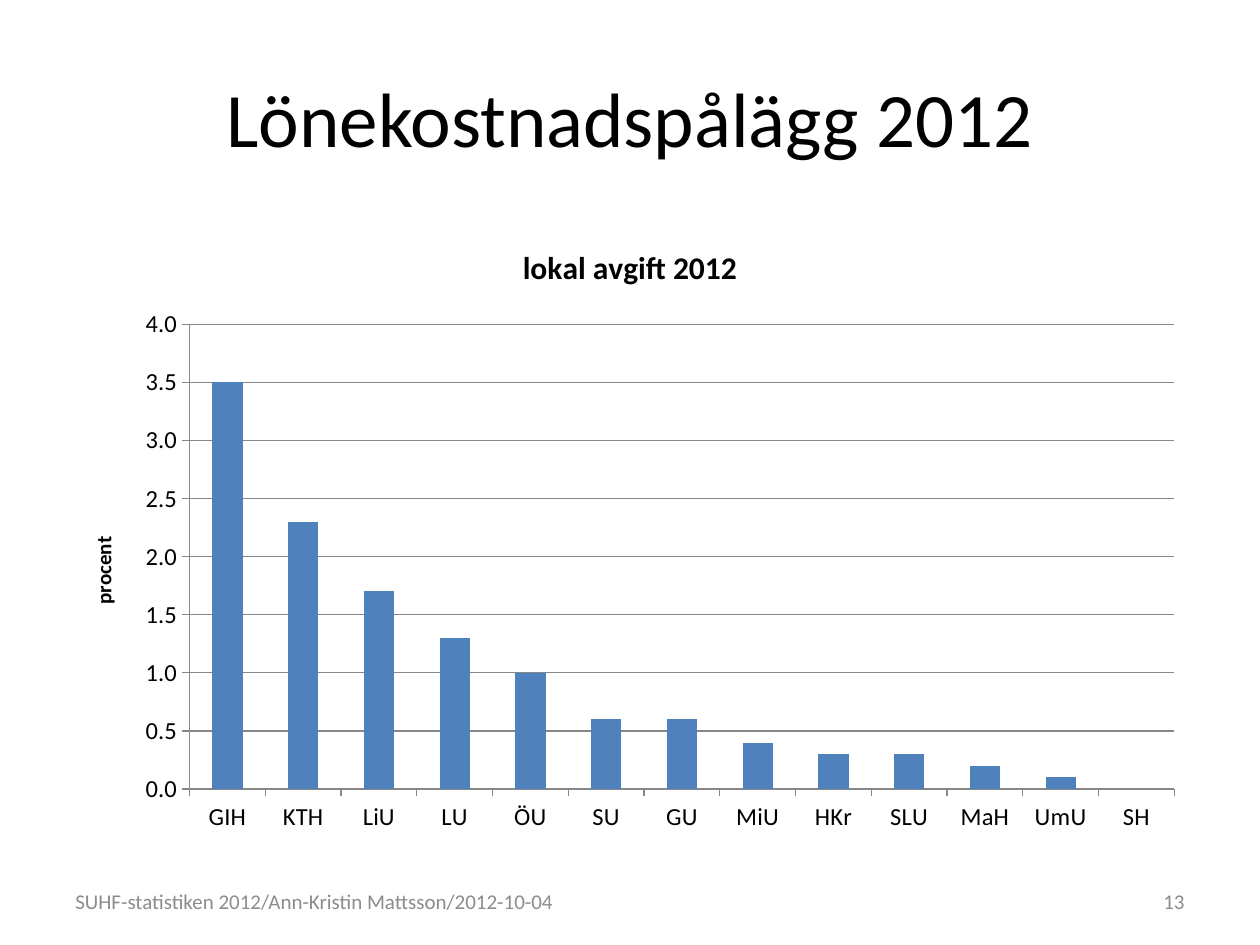
import dataclasses

import pptx
import pptx.chart.data
import pptx.dml.color
import pptx.enum.chart
import pptx.enum.text
import pptx.util
from pptx.util import Inches

ALIGN = pptx.enum.text.PP_ALIGN
TICK = pptx.enum.chart.XL_TICK_MARK


@dataclasses.dataclass(frozen=True)
class Theme:
    """Colours, font and type sizes of the slide."""

    font: str = "Calibri"
    text: str = "000000"
    muted: str = "8C8C8C"
    line: str = "878787"
    bar: str = "4F81BD"
    title_size: int = 44
    chart_title_size: int = 18
    axis_size: int = 14
    small_size: int = 12


THEME = Theme()
FEES = {
    "GIH": 3.5, "KTH": 2.3, "LiU": 1.7, "LU": 1.3, "ÖU": 1.0, "SU": 0.6, "GU": 0.6,
    "MiU": 0.4, "HKr": 0.3, "SLU": 0.3, "MaH": 0.2, "UmU": 0.1, "SH": 0.0,
}


def set_values(target, values):
    """Set each attribute of the target from a dict."""
    for name, value in values.items():
        setattr(target, name, value)


def style_font(font, size, color=THEME.text, bold=False):
    """Apply the theme font with a size, colour and weight."""
    set_values(font, {"name": THEME.font, "size": pptx.util.Pt(size), "bold": bold})
    font.color.rgb = pptx.dml.color.RGBColor.from_string(color)


def style_line(line):
    """Apply the thin grey chart line."""
    line.color.rgb = pptx.dml.color.RGBColor.from_string(THEME.line)
    line.width = pptx.util.Pt(0.75)


def add_text(slide, box, text, size, color, alignment):
    """Place one vertically centred line of text in a box."""
    frame = slide.shapes.add_textbox(*box).text_frame
    set_values(frame, {
        "word_wrap": True,
        "vertical_anchor": pptx.enum.text.MSO_ANCHOR.MIDDLE,
    })
    paragraph = frame.paragraphs[0]
    paragraph.alignment = alignment
    run = paragraph.add_run()
    run.text = text
    style_font(run.font, size, color)


def add_footer(slide, left, top, width, height):
    """Place the source at the left and the page number at the right."""
    source_width, number_width = Inches(4.5), Inches(1.43)
    add_text(slide, (left, top, source_width, height),
             "SUHF-statistiken 2012/Ann-Kristin Mattsson/2012-10-04",
             THEME.small_size, THEME.muted, ALIGN.LEFT)
    add_text(slide, (left + width - number_width, top, number_width, height),
             "13", THEME.small_size, THEME.muted, ALIGN.RIGHT)


def add_chart_title(owner, text, size):
    """Give a chart or an axis a bold title."""
    frame = (owner.chart_title if hasattr(owner, "chart_title") else owner.axis_title).text_frame
    frame.text = text
    style_font(frame.paragraphs[0].runs[0].font, size, bold=True)


def add_fee_chart(slide, box):
    """Place the column chart of local fees in a box."""
    data = pptx.chart.data.CategoryChartData(number_format="0.0")
    data.categories = list(FEES)
    data.add_series("lokal avgift 2012", list(FEES.values()))
    kind = pptx.enum.chart.XL_CHART_TYPE.COLUMN_CLUSTERED
    chart = slide.shapes.add_chart(kind, *box, data).chart
    chart.has_legend = False
    style_font(chart.font, THEME.axis_size)
    add_chart_title(chart, "lokal avgift 2012", THEME.chart_title_size)

    plot = chart.plots[0]
    set_values(plot, {"gap_width": 150, "vary_by_categories": False})
    fill = plot.series[0].format.fill
    fill.solid()
    fill.fore_color.rgb = pptx.dml.color.RGBColor.from_string(THEME.bar)

    for axis in (chart.category_axis, chart.value_axis):
        set_values(axis, {"major_tick_mark": TICK.OUTSIDE, "minor_tick_mark": TICK.NONE})
        style_font(axis.tick_labels.font, THEME.axis_size)
        style_line(axis.format.line)

    axis = chart.value_axis
    set_values(axis, {
        "minimum_scale": 0, "maximum_scale": 4, "major_unit": 0.5,
        "has_major_gridlines": True,
    })
    set_values(axis.tick_labels, {"number_format": "0.0", "number_format_is_linked": False})
    style_line(axis.major_gridlines.format.line)
    add_chart_title(axis, "procent", THEME.small_size)


def main():
    """Build and save the slide."""
    presentation = pptx.Presentation()
    set_values(presentation, {"slide_width": Inches(10), "slide_height": Inches(7.5)})
    slide = presentation.slides.add_slide(presentation.slide_layouts[6])
    left, width = Inches(0.5), Inches(9)
    add_text(slide, (left, Inches(0.3), width, Inches(1.25)),
             "Lönekostnadspålägg 2012", THEME.title_size, THEME.text, ALIGN.CENTER)
    add_footer(slide, left, Inches(6.95), width, Inches(0.4))
    add_fee_chart(slide, (left, Inches(1.75), width, Inches(4.95)))
    presentation.save("out.pptx")


if __name__ == "__main__":
    main()
